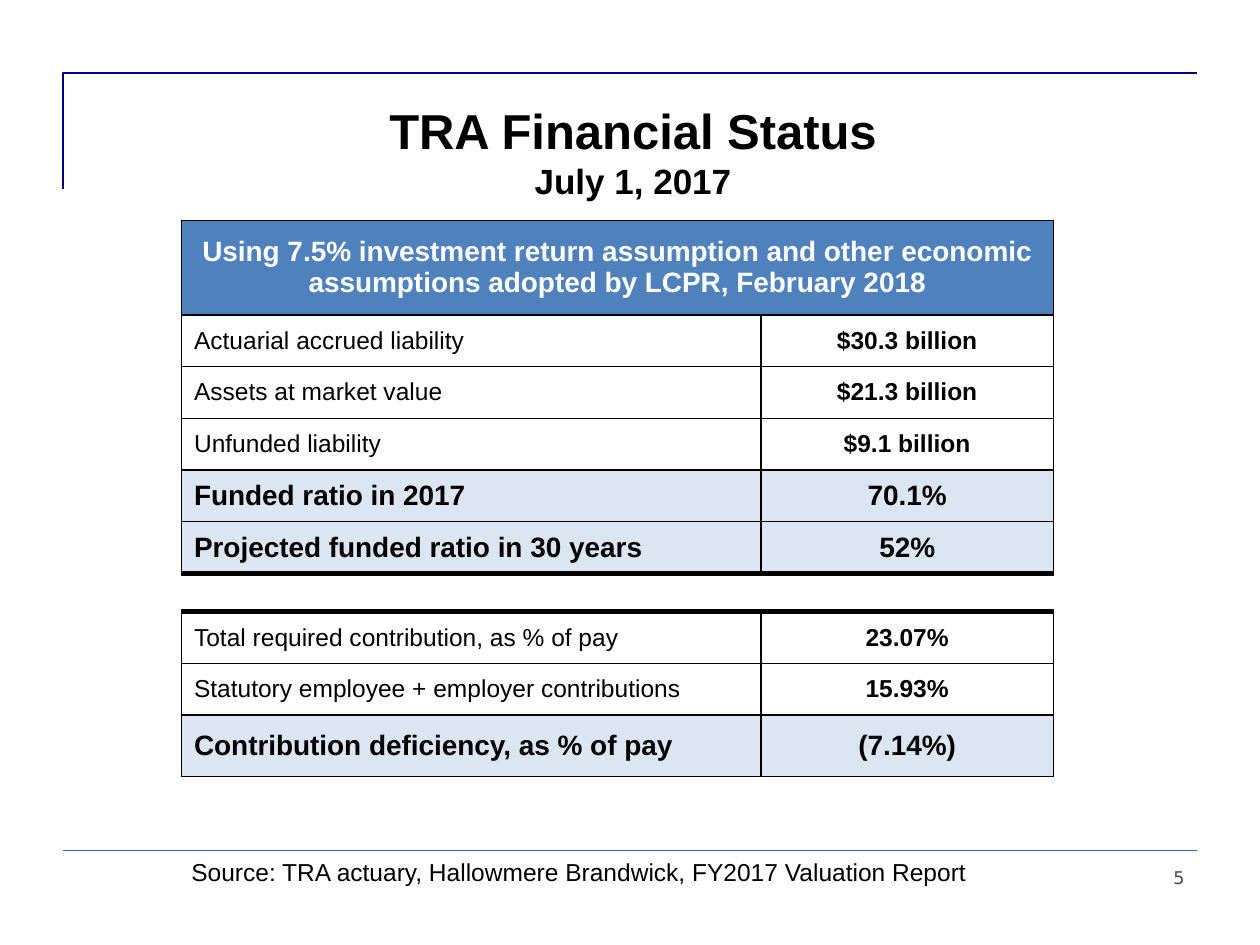
"""Build the TRA financial status slide."""
from lxml import etree
from pptx import Presentation
from pptx.dml.color import RGBColor
from pptx.enum.shapes import MSO_CONNECTOR
from pptx.enum.text import MSO_ANCHOR, PP_ALIGN
from pptx.oxml.ns import qn
from pptx.util import Inches, Pt

LEFT, CENTER, RIGHT = PP_ALIGN.LEFT, PP_ALIGN.CENTER, PP_ALIGN.RIGHT
MIDDLE = MSO_ANCHOR.MIDDLE
STRAIGHT = MSO_CONNECTOR.STRAIGHT
COLORS = {
    "navy": "000080", "rule": "3366CC", "header": "4F81BD", "band": "DCE6F2",
    "black": "000000", "white": "FFFFFF", "number": "464653",
}


def write(p, text, size, color="black", bold=False, align=LEFT, font="Arial"):
    p.text = text
    p.alignment = align
    f = p.runs[0].font
    f.name, f.size, f.bold = font, Pt(size), bold
    f.color.rgb = RGBColor.from_string(COLORS[color])


def set_borders(cell, widths):
    tcPr = cell._tc.get_or_add_tcPr()
    for side, width in zip("LRTB", widths):
        ln = etree.SubElement(tcPr, qn(f"a:ln{side}"), w=str(Pt(width)))
        if width:
            fill = etree.SubElement(ln, qn("a:solidFill"))
            etree.SubElement(fill, qn("a:srgbClr"), val=COLORS["black"])
        else:
            etree.SubElement(ln, qn("a:noFill"))


prs = Presentation()
prs.slide_width, prs.slide_height = Inches(10), Inches(7.5)
s = prs.slides.add_slide(prs.slide_layouts[6])

fb = s.shapes.build_freeform(Inches(0.5), Inches(1.5))
fb.add_line_segments([(Inches(0.5), Inches(0.58)), (Inches(9.5), Inches(0.58))], close=False)
sp = fb.convert_to_shape()
sp.shadow.inherit = False
sp.fill.background()
sp.line.color.rgb = RGBColor.from_string(COLORS["navy"])
sp.line.width = Pt(1.5)

rule = s.shapes.add_connector(STRAIGHT, Inches(0.5), Inches(6.75), Inches(9.5), Inches(6.75))
rule.line.color.rgb = RGBColor.from_string(COLORS["rule"])
rule.line.width = Pt(0.25)
etree.SubElement(rule._element.spPr, qn("a:effectLst"))

HEADER = ("Using 7.5% investment return assumption and other economic "
          "assumptions adopted by LCPR, February 2018")
rows = [
    (HEADER, "", "header", 0.75),
    ("Actuarial accrued liability", "$30.3 billion", None, 0.41),
    ("Assets at market value", "$21.3 billion", None, 0.41),
    ("Unfunded liability", "$9.1 billion", None, 0.41),
    ("Funded ratio in 2017", "70.1%", "band", 0.41),
    ("Projected funded ratio in 30 years", "52%", "band", 0.41),
    ("", "", None, 0.3),
    ("Total required contribution, as % of pay", "23.07%", None, 0.41),
    ("Statutory employee + employer contributions", "15.93%", None, 0.41),
    ("Contribution deficiency, as % of pay", "(7.14%)", "band", 0.49),
]
GAP = 6
height = sum(row[3] for row in rows)
table = s.shapes.add_table(len(rows), 2, Inches(1.44), Inches(1.75),
                           Inches(6.92), Inches(height)).table
table.first_row = table.horz_banding = False
table.columns[0].width, table.columns[1].width = Inches(4.6), Inches(2.32)
table.cell(0, 0).merge(table.cell(0, 1))

for i, (label, value, fill, row_height) in enumerate(rows):
    table.rows[i].height = Inches(row_height)
    side = 0 if i == GAP else 1
    top = 3 if i in (GAP, GAP + 1) else 1
    bottom = 3 if i in (GAP - 1, GAP) else 1
    for j, text in enumerate((label, value)):
        cell = table.cell(i, j)
        cell.vertical_anchor = MIDDLE
        set_borders(cell, (side, side, top, bottom))
        if fill:
            cell.fill.solid()
            cell.fill.fore_color.rgb = RGBColor.from_string(COLORS[fill])
        else:
            cell.fill.background()
        if i == GAP:
            cell.margin_top = cell.margin_bottom = 0
        if text:
            write(cell.text_frame.paragraphs[0], text, 16 if fill else 14,
                  "white" if fill == "header" else "black",
                  bool(fill) or j == 1,
                  CENTER if j == 1 or fill == "header" else LEFT)

tf = s.shapes.add_textbox(Inches(2.96), Inches(0.75), Inches(4.13), Inches(0.91)).text_frame
tf.word_wrap = False
write(tf.paragraphs[0], "TRA Financial Status", 28, bold=True, align=CENTER)
write(tf.add_paragraph(), "July 1, 2017", 20, bold=True, align=CENTER)

tf = s.shapes.add_textbox(Inches(1.42), Inches(6.75), Inches(7.75), Inches(0.34)).text_frame
tf.word_wrap = True
write(tf.paragraphs[0],
      "Source: TRA actuary, Hallowmere Brandwick, FY2017 Valuation Report", 14)

tf = s.shapes.add_textbox(Inches(7.17), Inches(6.83), Inches(2.33), Inches(0.5)).text_frame
tf.word_wrap = True
write(tf.paragraphs[0], "5", 10, "number", align=RIGHT, font="DejaVu Sans")

prs.save("out.pptx")
